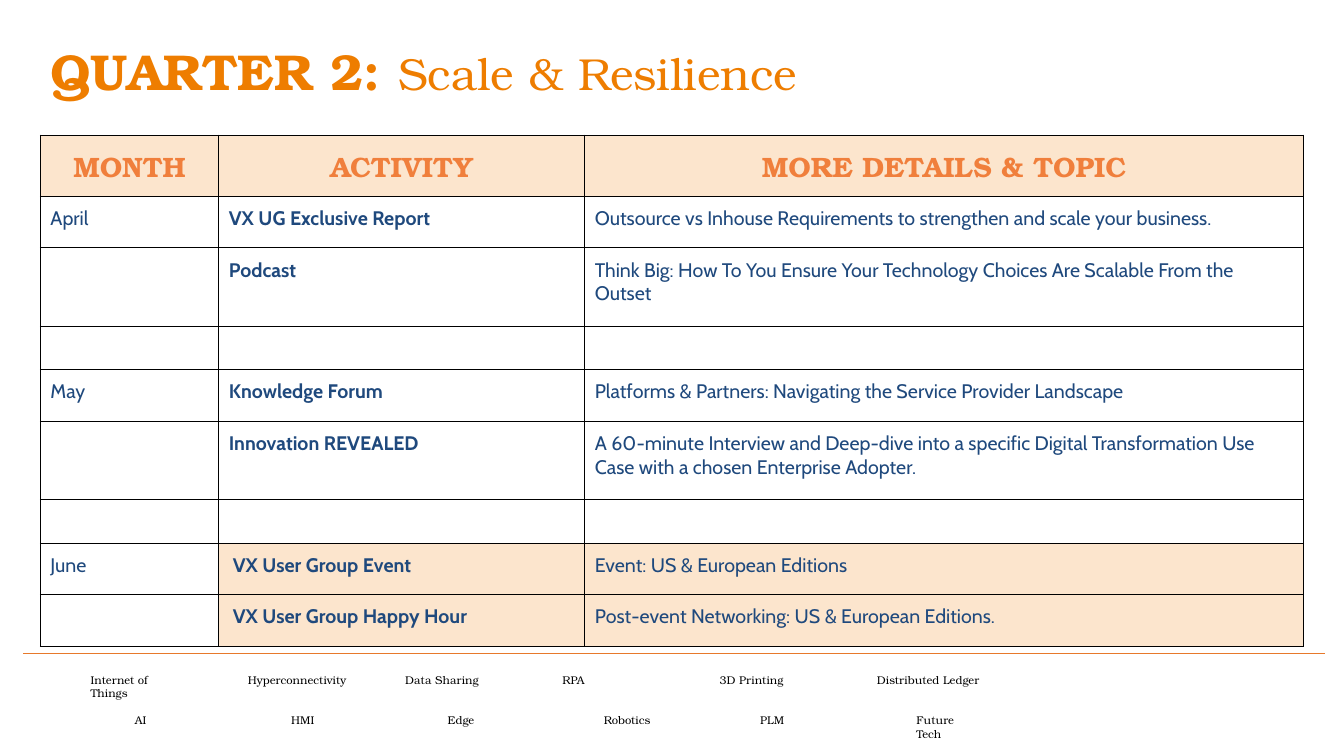
from dataclasses import dataclass

from lxml import etree
from pptx import Presentation
from pptx import util as u
from pptx.dml.color import RGBColor
from pptx.enum import shapes, text
from pptx.oxml import ns


@dataclass(frozen=True)
class Theme:
    serif: str = "TeX Gyre Bonum"
    sans: str = "Cabin"
    title: str = "EE7D00"
    heading: str = "F07F3C"
    body: str = "1F497D"
    ink: str = "000000"
    rule: str = "E7792B"
    tint: str = "FCE5CD"
    title_size: int = 36
    subtitle_size: int = 32
    heading_size: int = 20
    body_size: int = 14
    footer_size: int = 8


def add_span(para, content, *, font, size, color, bold=False):
    """Append formatted text to a paragraph."""
    span = para.add_run()
    span.text = content
    span.font.name = font
    span.font.size = u.Pt(size)
    span.font.bold = bold
    span.font.color.rgb = RGBColor.from_string(color)


class SlideBuilder:
    def __init__(self, slide, theme):
        self.slide = slide
        self.theme = theme

    def text_box(self, left, top, width, height):
        box = self.slide.shapes.add_textbox(*map(u.Inches, (left, top, width, height)))
        box.text_frame.word_wrap = True
        return box.text_frame.paragraphs[0]

    def title(self, lead, subtitle):
        theme = self.theme
        para = self.text_box(0.4, 0.42, 12.54, 1.86)
        para.line_spacing = 0.9
        para.space_after = u.Pt(6)
        add_span(para, lead, font=theme.serif, size=theme.title_size,
                 color=theme.title, bold=True)
        add_span(para, subtitle, font=theme.serif, size=theme.subtitle_size,
                 color=theme.title)

    def rule(self, left, right, top):
        line = self.slide.shapes.add_connector(
            shapes.MSO_CONNECTOR.STRAIGHT,
            *map(u.Inches, (left, top, right, top)))
        line.line.color.rgb = RGBColor.from_string(self.theme.rule)
        line.line.width = u.Pt(0.5)
        etree.SubElement(line.element.spPr, ns.qn("a:effectLst"))

    def footer_row(self, left, top, pitch, labels):
        theme = self.theme
        for index, (label, width) in enumerate(labels):
            para = self.text_box(left + index * pitch, top, width, 0.24)
            add_span(para, label, font=theme.serif, size=theme.footer_size,
                     color=theme.ink)

    def borders(self, cell):
        properties = cell._tc.get_or_add_tcPr()
        for side in ("a:lnL", "a:lnR", "a:lnT", "a:lnB"):
            line = etree.SubElement(properties, ns.qn(side), w=str(u.Pt(0.75)))
            fill = etree.SubElement(line, ns.qn("a:solidFill"))
            etree.SubElement(fill, ns.qn("a:srgbClr"), val=self.theme.ink)

    def cell(self, cell, content, *, header, bold, tinted, indent):
        theme = self.theme
        self.borders(cell)
        if tinted:
            cell.fill.solid()
            cell.fill.fore_color.rgb = RGBColor.from_string(theme.tint)
        else:
            cell.fill.background()
        if not content:
            return
        cell.margin_left = u.Inches(0.1 + indent)
        cell.margin_right = cell.margin_top = cell.margin_bottom = u.Inches(0.1)
        para = cell.text_frame.paragraphs[0]
        if header:
            para.alignment = text.PP_ALIGN.CENTER
            add_span(para, content, font=theme.serif, size=theme.heading_size,
                     color=theme.heading, bold=True)
        else:
            add_span(para, content, font=theme.sans, size=theme.body_size,
                     color=theme.body, bold=bold)

    def table(self, left, top, widths, heights, rows, first_event_row):
        frame = self.slide.shapes.add_table(
            len(rows), len(widths),
            *map(u.Inches, (left, top, sum(widths), sum(heights))))
        table = frame.table
        table.first_row = table.horz_banding = False
        for column, width in zip(table.columns, widths):
            column.width = u.Inches(width)
        for row, height in zip(table.rows, heights):
            row.height = u.Inches(height)
        for r, contents in enumerate(rows):
            for c, content in enumerate(contents):
                event = r >= first_event_row and c > 0
                self.cell(table.cell(r, c), content, header=r == 0, bold=c == 1,
                          tinted=r == 0 or event,
                          indent=0.04 if event and c == 1 else 0)


COLUMN_WIDTHS = (1.77, 3.63, 7.13)
HEADER, SINGLE, DOUBLE, GAP = 0.61, 0.51, 0.78, 0.43
ROW_HEIGHTS = (HEADER, SINGLE, DOUBLE, GAP, SINGLE, DOUBLE, GAP, SINGLE, SINGLE)
SCHEDULE = (
    ("MONTH", "ACTIVITY", "MORE DETAILS & TOPIC"),
    ("April", "VX UG Exclusive Report",
     "Outsource vs Inhouse Requirements to strengthen and scale your business."),
    ("", "Podcast",
     "Think Big: How To You Ensure Your Technology Choices Are Scalable "
     "From the Outset"),
    ("", "", ""),
    ("May", "Knowledge Forum",
     "Platforms & Partners: Navigating the Service Provider Landscape"),
    ("", "Innovation REVEALED",
     "A 60-minute Interview and Deep-dive into a specific Digital "
     "Transformation Use Case with a chosen Enterprise Adopter."),
    ("", "", ""),
    ("June", "VX User Group Event", "Event: US & European Editions"),
    ("", "VX User Group Happy Hour",
     "Post-event Networking: US & European Editions."),
)
UPPER_TOPICS = (("Internet of Things", 1.14), ("Hyperconnectivity", 1.45),
                ("Data Sharing", 1.22), ("RPA", 0.85),
                ("3D Printing", 1.1), ("Distributed Ledger", 1.24))
LOWER_TOPICS = (("AI", 0.61), ("HMI", 1.05), ("Edge", 0.91),
                ("Robotics", 0.85), ("PLM", 0.85), ("Future Tech", 0.83))


def main():
    deck = Presentation()
    deck.slide_width, deck.slide_height = u.Inches(13.33), u.Inches(7.5)
    builder = SlideBuilder(deck.slides.add_slide(deck.slide_layouts[6]), Theme())

    # Footer topics below the rule
    builder.footer_row(0.8, 6.63, 1.56, UPPER_TOPICS)
    builder.footer_row(1.24, 7.03, 1.55, LOWER_TOPICS)
    builder.rule(0.23, 13.14, 6.48)

    # Title and quarterly schedule
    builder.title("QUARTER 2: ", "Scale & Resilience")
    builder.table(0.4, 1.34, COLUMN_WIDTHS, ROW_HEIGHTS, SCHEDULE,
                  first_event_row=7)

    deck.save("out.pptx")


if __name__ == "__main__":
    main()
